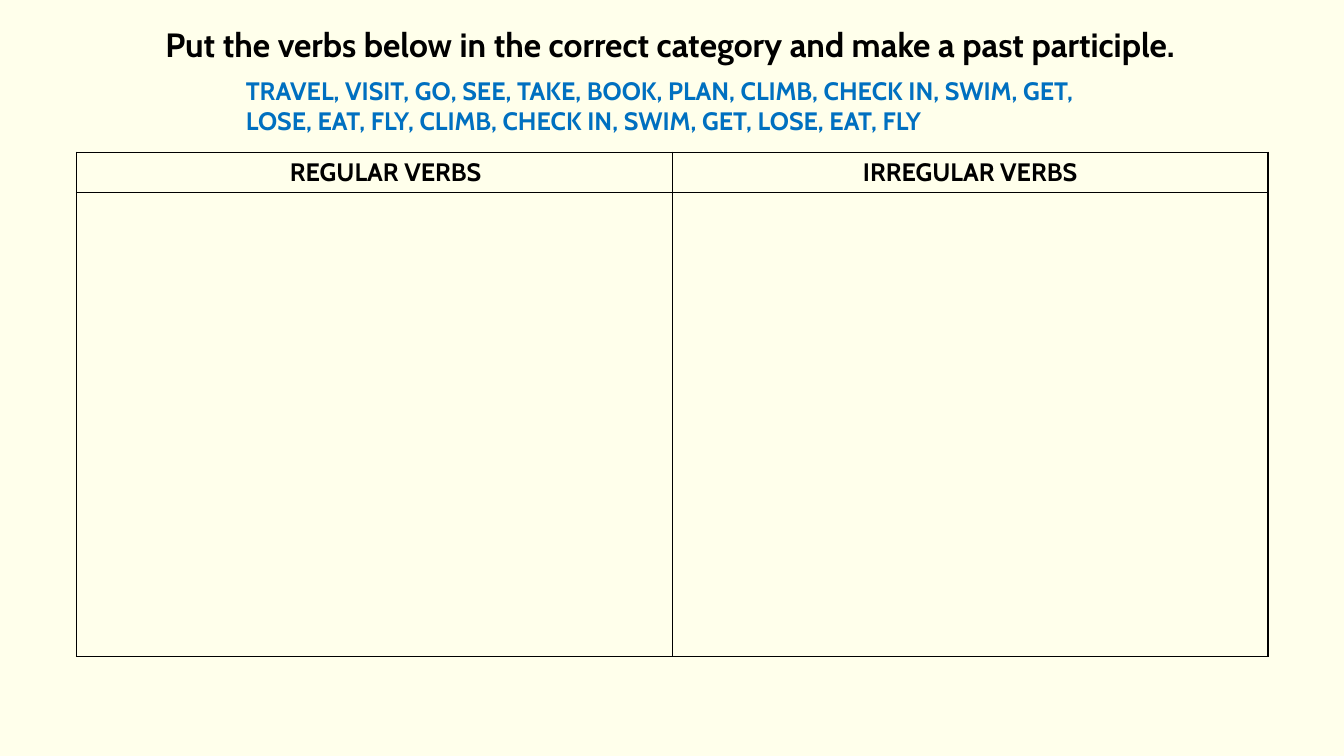
from lxml.etree import SubElement
from pptx import Presentation
from pptx.dml.color import RGBColor
from pptx.enum.text import MSO_ANCHOR, PP_ALIGN
from pptx.oxml.ns import qn
from pptx.util import Pt

COLOURS = {"background": "FFFFEB", "text": "000000", "verbs": "0070C0", "border": "000000"}
FONT = "Cabin"
TITLE = "Put the verbs below in the correct category and make a past participle."
VERBS = (
    "TRAVEL, VISIT, GO, SEE, TAKE, BOOK, PLAN, CLIMB, CHECK IN, SWIM, GET, "
    "LOSE, EAT, FLY, CLIMB, CHECK IN, SWIM, GET, LOSE, EAT, FLY"
)
HEADINGS = {"REGULAR VERBS": 23.2, "IRREGULAR VERBS": 7.2}
COLUMN_WIDTH = 425.5
ROW_HEIGHTS = (28.5, 331.5)


def write(frame, text, size, colour, align=PP_ALIGN.LEFT):
    """Put one bold paragraph into a text frame."""
    para = frame.paragraphs[0]
    para.alignment = align
    span = para.add_run()
    span.text = text
    for name, value in {"name": FONT, "size": Pt(size), "bold": True}.items():
        setattr(span.font, name, value)
    span.font.color.rgb = RGBColor.from_string(COLOURS[colour])


def add_text(page, bounds, text, size, colour):
    """Add a wrapping text box."""
    box = page.shapes.add_textbox(*map(Pt, bounds))
    box.text_frame.word_wrap = True
    write(box.text_frame, text, size, colour)


def style_cell(cell):
    """Give a cell a thin border on each side and no fill."""
    properties = cell._tc.get_or_add_tcPr()
    for side in ("lnL", "lnR", "lnT", "lnB"):
        line = SubElement(properties, qn(f"a:{side}"), w=str(Pt(1)))
        fill = SubElement(line, qn("a:solidFill"))
        SubElement(fill, qn("a:srgbClr"), val=COLOURS["border"])
    cell.fill.background()


def add_verb_table(page, left, top):
    """Add the two-column table with room to write under its headings."""
    width = COLUMN_WIDTH * len(HEADINGS)
    bounds = map(Pt, (left, top, width, sum(ROW_HEIGHTS)))
    table = page.shapes.add_table(len(ROW_HEIGHTS), len(HEADINGS), *bounds).table
    for name in ("first_row", "horz_banding"):
        setattr(table, name, False)
    for row, height in zip(table.rows, ROW_HEIGHTS):
        row.height = Pt(height)
    for cell in table.iter_cells():
        style_cell(cell)
    for index, (heading, margin) in enumerate(HEADINGS.items()):
        table.columns[index].width = Pt(COLUMN_WIDTH)
        cell = table.cell(0, index)
        cell.margin_left = Pt(margin)
        cell.vertical_anchor = MSO_ANCHOR.TOP
        write(cell.text_frame, heading, 18, "text", PP_ALIGN.CENTER)


def main():
    """Build and save the verb sorting slide."""
    deck = Presentation()
    deck.slide_width, deck.slide_height = Pt(960), Pt(540)
    page = deck.slides.add_slide(deck.slide_layouts[6])
    page.background.fill.solid()
    page.background.fill.fore_color.rgb = RGBColor.from_string(COLOURS["background"])
    add_text(page, (111, 13.7, 789, 36), TITLE, 24, "text")
    add_text(page, (168.5, 50.4, 638, 51), VERBS, 18, "verbs")
    add_verb_table(page, 54.7, 108.7)
    deck.save("out.pptx")


if __name__ == "__main__":
    main()
